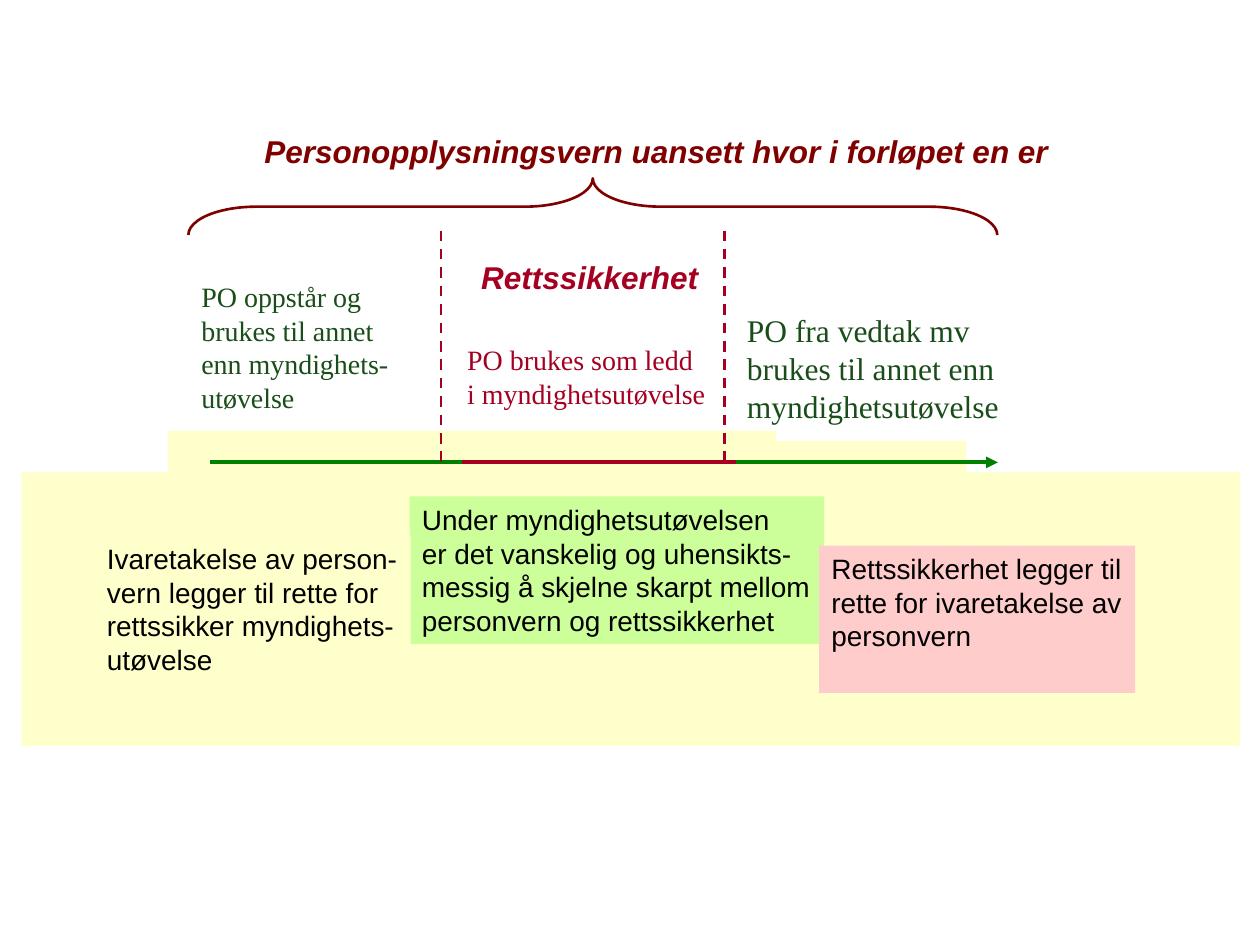
from lxml import etree
from pptx import Presentation
from pptx.dml.color import RGBColor
from pptx.enum.dml import MSO_LINE
from pptx.enum.shapes import MSO_CONNECTOR, MSO_SHAPE
from pptx.enum.text import MSO_ANCHOR, PP_ALIGN
from pptx.oxml.ns import qn
from pptx.util import Inches, Pt

COLORS = {
    "cream": "FFFFCC", "lime": "CCFF99", "pink": "FFCCCC",
    "forest": "194D19", "green": "008000", "crimson": "A50021",
    "maroon": "800000", "black": "000000",
}
SERIF, SANS = "Times New Roman", "Arial"


def add_block(left, top, width, height, fill=None, text="", font=SANS,
              size=16, color="black", emphasis=False):
    """Add a borderless rectangle, or a text box when there is no fill."""
    bounds = [Inches(v) for v in (left, top, width, height)]
    if fill:
        block = slide.shapes.add_shape(MSO_SHAPE.RECTANGLE, *bounds)
        block.shadow.inherit = False
        block.fill.solid()
        block.fill.fore_color.rgb = RGBColor.from_string(COLORS[fill])
        block.line.fill.background()
    else:
        block = slide.shapes.add_textbox(*bounds)
    if text:
        frame = block.text_frame
        frame.word_wrap = False
        frame.vertical_anchor = MSO_ANCHOR.TOP
        paragraph = frame.paragraphs[0]
        paragraph.text = text
        paragraph.alignment = PP_ALIGN.LEFT
        for run in paragraph.runs:
            run.font.name = font
            run.font.size = Pt(size)
            run.font.bold = run.font.italic = emphasis
            run.font.color.rgb = RGBColor.from_string(COLORS[color])


def add_line(x1, y1, x2, y2, color, width):
    line = slide.shapes.add_connector(
        MSO_CONNECTOR.STRAIGHT, *[Inches(v) for v in (x1, y1, x2, y2)])
    line.line.color.rgb = RGBColor.from_string(COLORS[color])
    line.line.width = Pt(width)
    etree.SubElement(line._element.spPr, qn("a:effectLst"))
    return line


prs = Presentation()
prs.slide_width, prs.slide_height = Inches(10), Inches(7.5)
slide = prs.slides.add_slide(prs.slide_layouts[6])

# Stepped cream background behind the timeline
add_block(1.33, 3.42, 4.83, 0.58, "cream")
add_block(1.67, 3.5, 6, 0.5, "cream")

# Timeline: before, during and after the exercise of authority
TIMELINE_Y = 3.67
after = add_line(5.83, TIMELINE_Y, 7.92, TIMELINE_Y, "green", 2.25)
etree.SubElement(after.line._get_or_add_ln(), qn("a:tailEnd"), type="triangle")
add_line(3.67, TIMELINE_Y, 5.84, TIMELINE_Y, "crimson", 2.25)
add_line(1.67, TIMELINE_Y, 3.67, TIMELINE_Y, "green", 2.25)

for divider_x in (3.5, 5.75):
    divider = add_line(divider_x, 1.83, divider_x, TIMELINE_Y, "crimson", 1.5)
    divider.line.dash_style = MSO_LINE.DASH

# Phase descriptions
add_block(1.5, 2.17, 1.69, 1.17, font=SERIF, color="forest",
          text="PO oppstår og\nbrukes til annet\nenn myndighets-\nutøvelse")
add_block(3.61, 2.67, 2.1, 0.64, font=SERIF, color="crimson",
          text="PO brukes som ledd\ni myndighetsutøvelse")
add_block(5.83, 2.42, 2.2, 1, font=SERIF, size=18, color="forest",
          text="PO fra vedtak mv\nbrukes til annet enn\nmyndighetsutøvelse")

# Headings and the brace across all phases
add_block(2, 1, 6.42, 0.4, size=18, color="maroon", emphasis=True,
          text="Personopplysningsvern uansett hvor i forløpet en er")
add_block(3.72, 2, 1.92, 0.4, size=18, color="crimson", emphasis=True,
          text="Rettssikkerhet")
brace = slide.shapes.add_shape(MSO_SHAPE.RIGHT_BRACE, Inches(4.48),
                               Inches(-1.57), Inches(0.45), Inches(6.42))
brace.rotation = 270
brace.adjustments[0] = 1.2
brace.adjustments[1] = 0.5
brace.shadow.inherit = False
brace.fill.background()
brace.line.color.rgb = RGBColor.from_string(COLORS["maroon"])
brace.line.width = Pt(1.5)

# Consequences for each phase
add_block(0.17, 3.75, 9.67, 2.17, "cream")
add_block(3.25, 3.94, 3.29, 1.17, "lime",
          "Under myndighetsutøvelsen\ner det vanskelig og uhensikts-\n"
          "messig å skjelne skarpt mellom\npersonvern og rettssikkerhet")
add_block(0.75, 4.25, 2.51, 1.17, "cream",
          "Ivaretakelse av person-\nvern legger til rette for\n"
          "rettssikker myndighets-\nutøvelse")
add_block(6.5, 4.33, 2.51, 1.17, "pink",
          "Rettssikkerhet legger til\nrette for ivaretakelse av\npersonvern")

prs.save("out.pptx")
